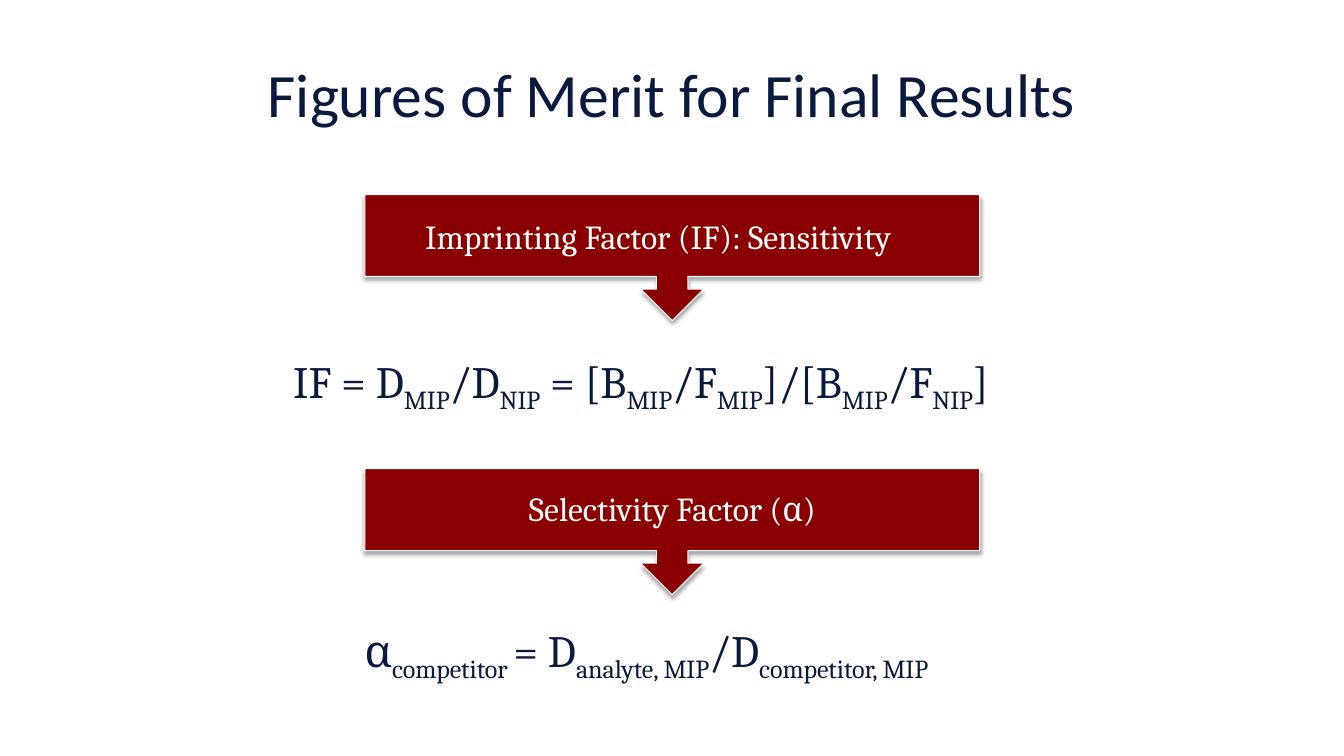
from lxml import etree
from pptx import Presentation
from pptx.dml.color import RGBColor
from pptx.enum import shapes, text
from pptx.oxml import ns
from pptx.util import Pt

NAVY = RGBColor(0x0A, 0x19, 0x3E)
DARK_RED = RGBColor(0x8A, 0x00, 0x00)
WHITE = RGBColor(0xFF, 0xFF, 0xFF)


class MeritSlide:
    """Style and current slide; all lengths are in points."""

    title_font, body_font = "Calibri", "Cambria"

    def __init__(self, deck):
        self.slide = deck.slides.add_slide(deck.slide_layouts[5])

    def add_run(self, paragraph, words, size, color, font, subscript=False):
        run = paragraph.add_run()
        run.text = words
        run.font.size = Pt(size)
        run.font.name = font
        run.font.color.rgb = color
        if subscript:
            run.font.bold = None
            run._r.get_or_add_rPr().set("baseline", "-25000")

    def title(self, words, left, top, width, height):
        heading = self.slide.shapes.title
        heading.left, heading.top = Pt(left), Pt(top)
        heading.width, heading.height = Pt(width), Pt(height)
        heading.text_frame.vertical_anchor = text.MSO_ANCHOR.MIDDLE
        paragraph = heading.text_frame.paragraphs[0]
        paragraph.alignment = text.PP_ALIGN.CENTER
        self.add_run(paragraph, words, 44, NAVY, self.title_font)

    def callout(self, left, top, width, height):
        banner = self.slide.shapes.add_shape(
            shapes.MSO_SHAPE.DOWN_ARROW_CALLOUT,
            Pt(left), Pt(top), Pt(width), Pt(height))
        banner.fill.solid()
        banner.fill.fore_color.rgb = DARK_RED
        banner.line.color.rgb = WHITE
        banner.line.width = Pt(0.75)
        # Soft shadow falling straight down
        banner.shadow.inherit = False
        effects = banner._element.spPr.find(ns.qn("a:effectLst"))
        shadow = etree.SubElement(
            effects, ns.qn("a:outerShdw"), blurRad=str(Pt(3.1)),
            dist=str(Pt(1.8)), dir="5400000", rotWithShape="0")
        black = etree.SubElement(shadow, ns.qn("a:srgbClr"), val="000000")
        etree.SubElement(black, ns.qn("a:alpha"), val="35000")

    def text_line(self, parts, left, top, width, height, size, color):
        """Write parts in turn: normal, subscript, normal, ..."""
        box = self.slide.shapes.add_textbox(
            Pt(left), Pt(top), Pt(width), Pt(height))
        box.text_frame.word_wrap = True
        paragraph = box.text_frame.paragraphs[0]
        for index, words in enumerate(parts):
            self.add_run(paragraph, words, size, color, self.body_font,
                         subscript=index % 2 == 1)


# Each factor: callout top, label and its place, formula and its place
FACTORS = [
    (139, "Imprinting Factor (IF): Sensitivity", (296.6, 150.5, 419.8, 58.3),
     ["IF = D", "MIP", "/D", "NIP", " = [B", "MIP", "/F", "MIP",
      "]/[B", "MIP", "/F", "NIP", "]"], (202.3, 249.1, 555.1, 106.6)),
    (334.8, "Selectivity Factor (α)", (370.8, 344.9, 345.6, 58.3),
     ["α", "competitor ", "= D", "analyte, MIP", "/D", "competitor, MIP"],
     (253.4, 441.4, 504, 85)),
]


def main():
    deck = Presentation()
    deck.slide_width, deck.slide_height = Pt(960), Pt(540)
    merit = MeritSlide(deck)

    # Title
    merit.title("Figures of Merit for Final Results", 48, 21.6, 864, 90)

    # Factor banners with their formulas
    for banner_top, label, label_place, formula, formula_place in FACTORS:
        merit.callout(260.6, banner_top, 439.2, 90)
        merit.text_line([label], *label_place, size=24, color=WHITE)
        merit.text_line(formula, *formula_place, size=32, color=NAVY)

    deck.save("out.pptx")


if __name__ == "__main__":
    main()
